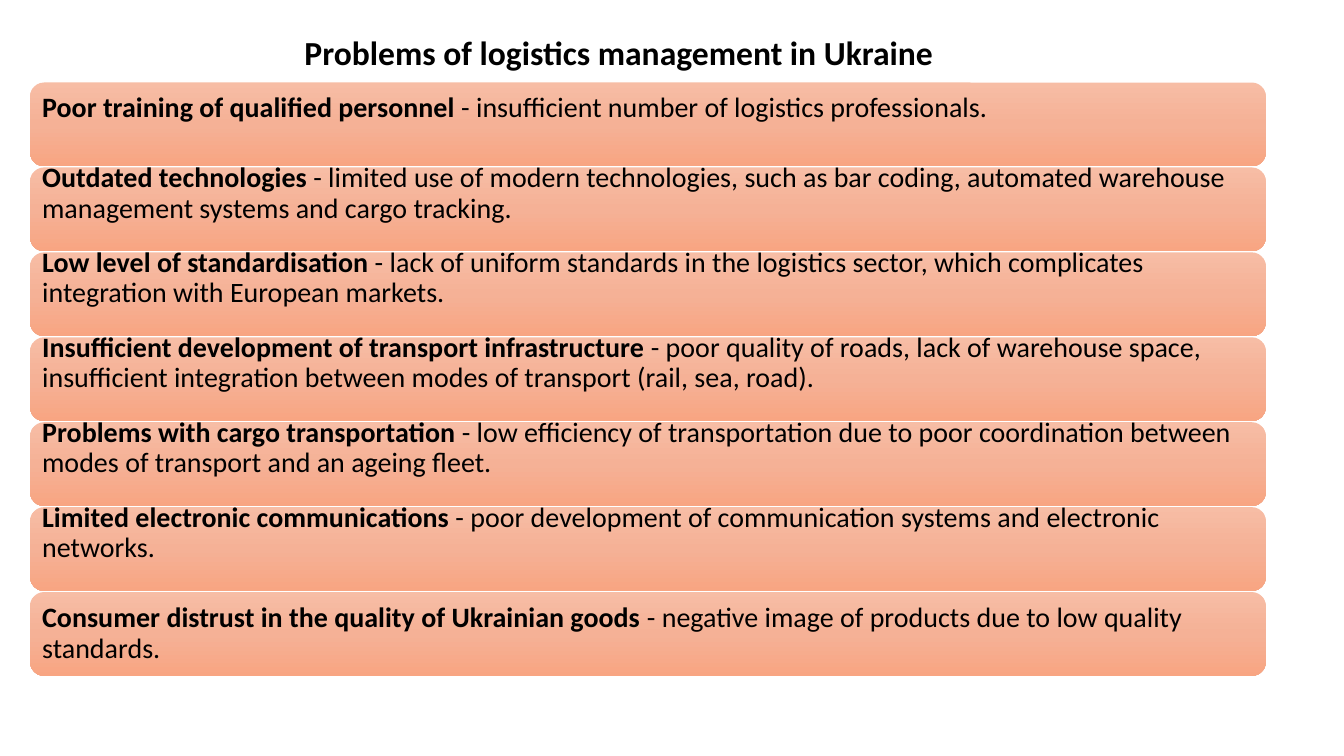
import copy

import pptx
import pptx.dml.color
import pptx.enum.shapes
import pptx.enum.text
import pptx.util

Cm = pptx.util.Cm
Pt = pptx.util.Pt

TITLE = "Problems of logistics management in Ukraine"
PROBLEMS = [
    ("Poor training of qualified personnel",
     "insufficient number of logistics professionals."),
    ("Outdated technologies",
     "limited use of modern technologies, such as bar coding, automated warehouse "
     "management systems and cargo tracking."),
    ("Low level of standardisation",
     "lack of uniform standards in the logistics sector, which complicates "
     "integration with European markets."),
    ("Insufficient development of transport infrastructure",
     "poor quality of roads, lack of warehouse space, insufficient integration "
     "between modes of transport (rail, sea, road)."),
    ("Problems with cargo transportation",
     "low efficiency of transportation due to poor coordination between modes of "
     "transport and an ageing fleet."),
    ("Limited electronic communications",
     "poor development of communication systems and electronic networks."),
    ("Consumer distrust in the quality of Ukrainian goods",
     "negative image of products due to low quality standards."),
]
COLOURS = {"text": "000000", "top": "F7BDA5", "middle": "F5B196", "bottom": "F8A582"}
FONT = "Calibri"

BAR_LEFT, BAR_TOP, BAR_WIDTH, BAR_HEIGHT = 0.76, 2.08, 31.14, 2.11
BAR_PITCH = 2.14
INSET = 0.2
RAISED_INSET = 0.98  # lifts the text of every bar but the last by half a line


def colour(name):
    return pptx.dml.color.RGBColor.from_string(COLOURS[name])


def style(paragraph, size):
    paragraph.font.name = FONT
    paragraph.font.size = Pt(size)
    paragraph.font.color.rgb = colour("text")


def fill_bar(bar):
    """Give the bar a vertical gradient of three stops."""
    bar.fill.gradient()
    bar.fill.gradient_angle = 270
    first = bar.fill.gradient_stops[0]._gs
    first.addnext(copy.deepcopy(first))
    names = ("top", "middle", "bottom")
    for stop, name, position in zip(bar.fill.gradient_stops, names, (0, 0.5, 1)):
        stop.color.rgb = colour(name)
        stop.position = position


def add_bar(slide, index, problem, detail):
    bar = slide.shapes.add_shape(
        pptx.enum.shapes.MSO_SHAPE.ROUNDED_RECTANGLE,
        Cm(BAR_LEFT), Cm(BAR_TOP + index * BAR_PITCH), Cm(BAR_WIDTH), Cm(BAR_HEIGHT))
    bar.shadow.inherit = False
    bar.line.fill.background()
    fill_bar(bar)

    frame = bar.text_frame
    frame.word_wrap = True
    frame.vertical_anchor = pptx.enum.text.MSO_ANCHOR.MIDDLE
    frame.margin_left = frame.margin_right = frame.margin_top = Cm(INSET)
    is_last = index == len(PROBLEMS) - 1
    frame.margin_bottom = Cm(INSET if is_last else RAISED_INSET)

    para = frame.paragraphs[0]
    para.alignment = pptx.enum.text.PP_ALIGN.LEFT
    para.line_spacing = 0.9
    style(para, 20)
    for text, bold in ((problem, True), (f" - {detail}", False)):
        span = para.add_run()
        span.text = text
        span.font.bold = bold


def add_title(slide):
    box = slide.shapes.add_textbox(Cm(7.34), Cm(0.69), Cm(16.51), Cm(1.27))
    box.text_frame.word_wrap = False
    para = box.text_frame.paragraphs[0]
    para.text = TITLE
    para.alignment = pptx.enum.text.PP_ALIGN.CENTER
    style(para, 24)
    para.font.bold = True


def main():
    deck = pptx.Presentation()
    deck.slide_width, deck.slide_height = Cm(33.87), Cm(19.05)
    slide = deck.slides.add_slide(deck.slide_layouts[6])
    for index, (problem, detail) in enumerate(PROBLEMS):
        add_bar(slide, index, problem, detail)
    add_title(slide)
    deck.save("out.pptx")


if __name__ == "__main__":
    main()
